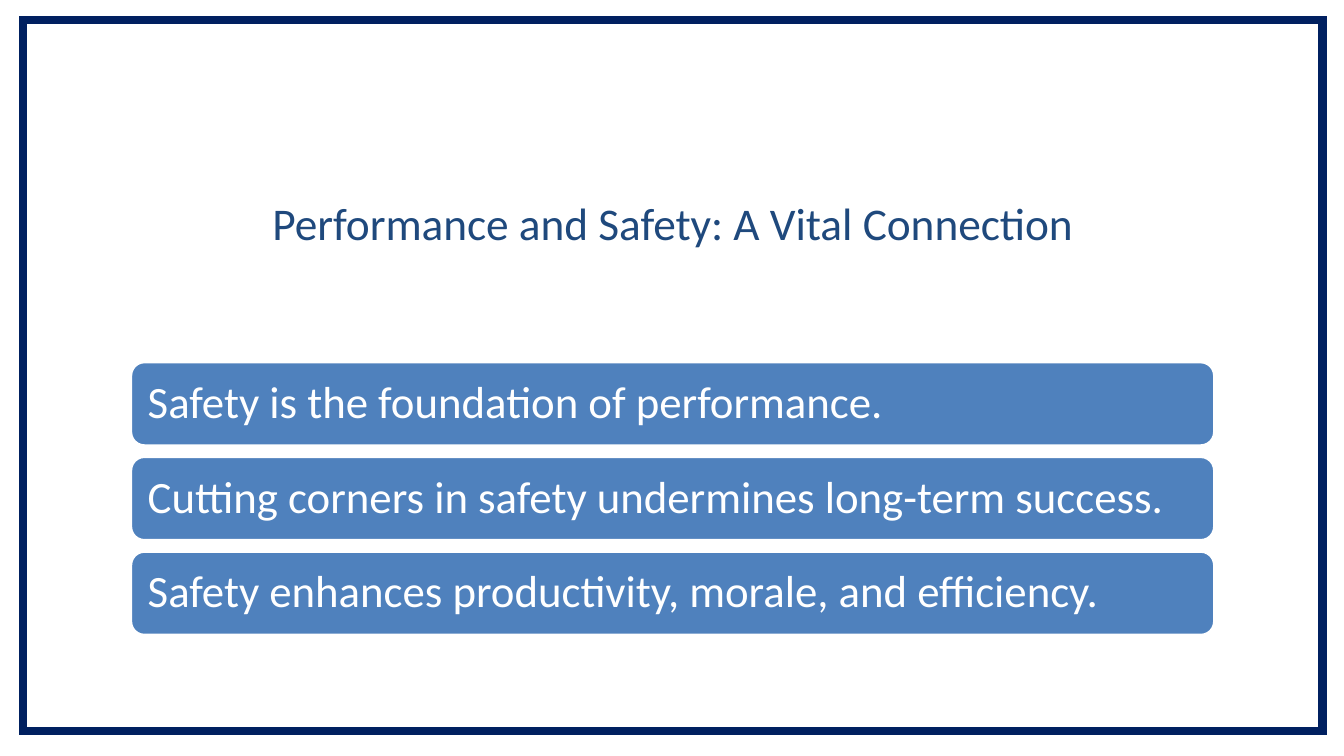
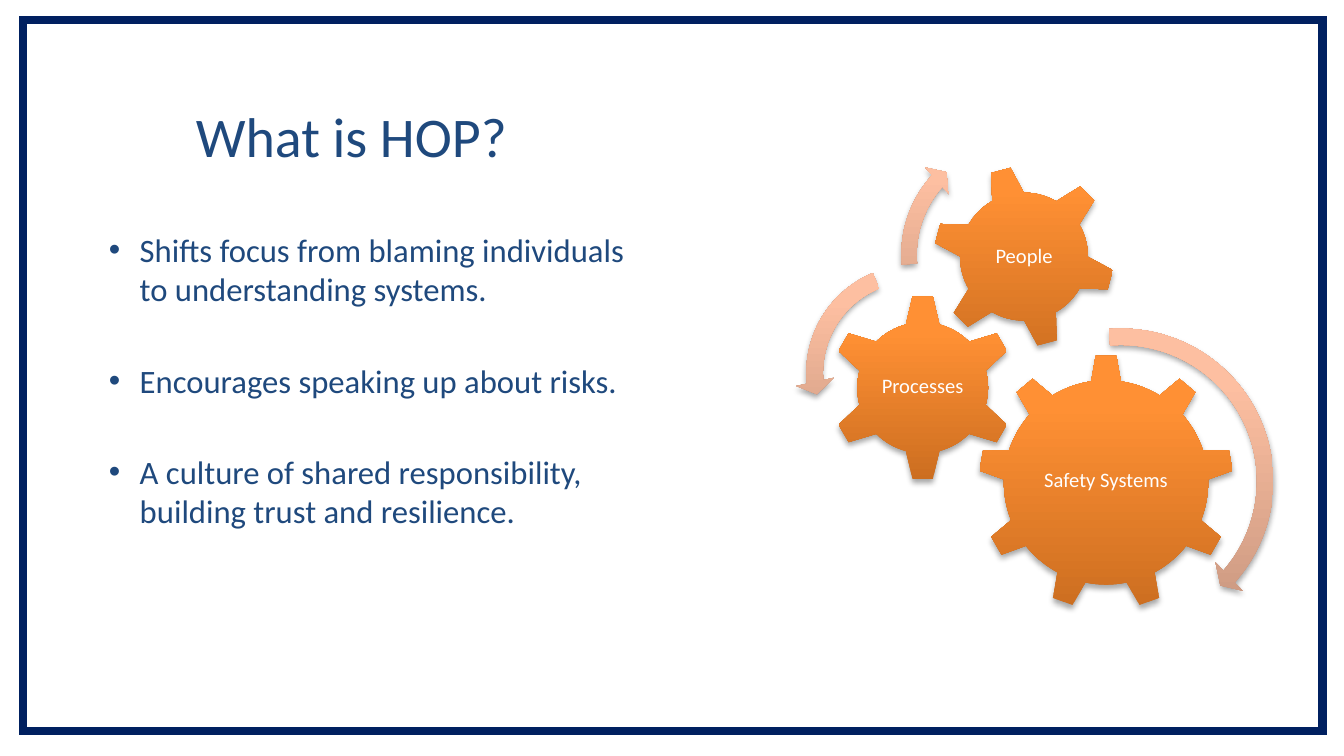
from lxml import etree
from pptx import Presentation
from pptx.dml.color import RGBColor
from pptx.enum.shapes import MSO_SHAPE as SHAPE
from pptx.enum.text import MSO_ANCHOR as ANCHOR, MSO_AUTO_SIZE as AUTO_SIZE, PP_ALIGN as ALIGN
from pptx.oxml import parse_xml
from pptx.oxml.ns import nsdecls, qn
from pptx.util import Inches, Pt

COLORS = {"frame": "002060", "text": "1F497D", "bar": "4F81BD", "white": "FFFFFF", "shadow": "000000"}
GEAR_STOPS = {0: "CC6E20", 80: "FF9034", 100: "FF9136"}
ARROW_STOPS = {0: "C3937C", 80: "FDBFA1", 100: "FFBFA1"}
FONT = "Calibri"
SLIDE_WIDTH = 10
TITLE_AND_CONTENT, TITLE_ONLY = 1, 5

STATEMENTS = [
    "Safety is the foundation of performance.",
    "Cutting corners in safety undermines long-term success.",
    "Safety enhances productivity, morale, and efficiency.",
]
HOP_POINTS = [
    "Shifts focus from blaming individuals to understanding systems.",
    "Encourages speaking up about risks.",
    "A culture of shared responsibility, building trust and resilience.",
]
GEARS = [
    ("Safety Systems", SHAPE.GEAR_9, (7.28, 2.64, 1.9), 0, (7.66, 3.09, 1.14, 0.98)),
    ("Processes", SHAPE.GEAR_6, (6.17, 2.19, 1.39), 0, (6.52, 2.54, 0.69, 0.68)),
    ("People", SHAPE.GEAR_6, (6.94, 1.23, 1.36), 345, (7.24, 1.53, 0.76, 0.76)),
]
ARROWS = [
    (SHAPE.CIRCULAR_ARROW, (7.12, 2.36, 2.44), (0.05, 2.99, 24.85, 159.29, 0.06)),
    (SHAPE.LEFT_CIRCULAR_ARROW, (5.92, 1.89, 1.77), (0.07, 4.3, 104.89, 148.38, 0.08)),
    (SHAPE.CIRCULAR_ARROW, (6.63, 0.94, 1.91), (0.06, 3.94, 133.14, 105.08, 0.07)),
]


def color(name):
    return RGBColor.from_string(COLORS[name])


def place(shape, left, top, width, height):
    shape.left, shape.top = Inches(left), Inches(top)
    shape.width, shape.height = Inches(width), Inches(height)


def write_text(shape, *texts, size, tone="text", align=ALIGN.LEFT, anchor=ANCHOR.MIDDLE,
               insets=(0.1, 0.05, 0.1, 0.05), line_spacing=1.0, gap=0):
    frame = shape.text_frame
    frame.word_wrap = True
    frame.auto_size = AUTO_SIZE.NONE
    frame.vertical_anchor = anchor
    frame.margin_left, frame.margin_top, frame.margin_right, frame.margin_bottom = map(Inches, insets)
    for index, text in enumerate(texts):
        paragraph = frame.paragraphs[0] if index == 0 else frame.add_paragraph()
        paragraph.alignment = align
        paragraph.line_spacing = line_spacing
        paragraph.space_before = Pt(gap if index else 0)
        run = paragraph.add_run()
        run.text = text
        run.font.name = FONT
        run.font.size = Pt(size)
        run.font.color.rgb = color(tone)


def add_plain_shape(slide, kind, left, top, width, height):
    shape = slide.shapes.add_shape(kind, *map(Inches, (left, top, width, height)))
    shape.shadow.inherit = False
    return shape


def add_frame_to_master(presentation, slide):
    frame = add_plain_shape(slide, SHAPE.RECTANGLE, 0.17, 0.15, 9.67, 5.29)
    frame.fill.background()
    frame.line.color.rgb = color("frame")
    frame.line.width = Pt(4.5)
    etree.SubElement(frame.element.spPr.find(qn("a:ln")), qn("a:miter"), lim="800000")
    presentation.slide_master.element.cSld.spTree.insert(2, frame.element)


def add_title(slide, text, box, **text_format):
    title = slide.shapes.title
    place(title, *box)
    write_text(title, text, align=ALIGN.CENTER, **text_format)


def add_bullets(slide, texts, box):
    body = slide.placeholders[1]
    place(body, *box)
    write_text(body, *texts, size=17.5, anchor=ANCHOR.TOP, gap=28)
    for paragraph in body.text_frame.paragraphs:
        properties = paragraph._p.get_or_add_pPr()
        properties.set("marL", str(Inches(0.61)))
        properties.set("indent", str(Inches(-0.23)))


def add_bar(slide, text, top):
    bar = add_plain_shape(slide, SHAPE.ROUNDED_RECTANGLE, 0.97, top, 8.07, 0.63)
    bar.fill.solid()
    bar.fill.fore_color.rgb = color("bar")
    bar.line.color.rgb = color("white")
    bar.line.width = Pt(2)
    write_text(bar, text, size=24, tone="white", insets=(0.1, 0.1, 0.1, 0.1), line_spacing=0.9)


def add_glossy_shape(slide, kind, left, top, side, stops):
    shape = add_plain_shape(slide, kind, left, top, side, side)
    shape.line.fill.background()
    properties = shape.element.spPr
    stop_xml = "".join(
        f'<a:gs pos="{position * 1000}"><a:srgbClr val="{tone}"/></a:gs>' for position, tone in stops.items()
    )
    gradient = parse_xml(
        f'<a:gradFill {nsdecls("a")} rotWithShape="0"><a:gsLst>{stop_xml}</a:gsLst>'
        '<a:lin ang="16200000" scaled="0"/></a:gradFill>'
    )
    properties.find(qn("a:prstGeom")).addnext(gradient)
    shadow = etree.SubElement(
        properties.find(qn("a:effectLst")), qn("a:outerShdw"),
        blurRad=str(Pt(3.1)), dist=str(Pt(1.8)), dir="5400000", rotWithShape="0",
    )
    tone = etree.SubElement(shadow, qn("a:srgbClr"), val=COLORS["shadow"])
    etree.SubElement(tone, qn("a:alpha"), val="35000")
    return shape


def add_gear(slide, text, kind, square, rotation, text_box):
    gear = add_glossy_shape(slide, kind, *square, GEAR_STOPS)
    gear.rotation = rotation
    label = slide.shapes.add_textbox(*map(Inches, text_box))
    write_text(label, text, size=11, tone="white", align=ALIGN.CENTER,
               insets=(0.02, 0.02, 0.02, 0.02), line_spacing=0.9)


def add_turning_arrow(slide, kind, square, adjustments):
    arrow = add_glossy_shape(slide, kind, *square, ARROW_STOPS)
    for index, value in enumerate(adjustments):
        arrow.adjustments[index] = value


def build_connection_slide(slide):
    add_title(slide, "Performance and Safety: A Vital Connection", (0.97, 1.44, 8.07, 0.88),
              size=24.3, anchor=ANCHOR.BOTTOM, insets=(0.1, 0.05, 0.1, 0.46))
    first_top, last_top = 2.69, 4.1
    step = (last_top - first_top) / (len(STATEMENTS) - 1)
    for index, statement in enumerate(STATEMENTS):
        add_bar(slide, statement, first_top + index * step)


def build_hop_slide(slide):
    add_title(slide, "What is HOP?", (0.66, 0.66, 3.91, 1.19), size=30, insets=(0.1, 0.05, 0.1, 0.55))
    add_bullets(slide, HOP_POINTS, (0.33, 1.66, 4.44, 2.96))
    for gear in GEARS:
        add_gear(slide, *gear)
    for arrow in ARROWS:
        add_turning_arrow(slide, *arrow)


def main():
    presentation = Presentation()
    presentation.slide_width = Inches(SLIDE_WIDTH)
    presentation.slide_height = Inches(SLIDE_WIDTH * 9 / 16)
    layouts = presentation.slide_layouts
    connection_slide = presentation.slides.add_slide(layouts[TITLE_ONLY])
    add_frame_to_master(presentation, connection_slide)
    build_connection_slide(connection_slide)
    build_hop_slide(presentation.slides.add_slide(layouts[TITLE_AND_CONTENT]))
    presentation.save("out.pptx")


if __name__ == "__main__":
    main()
